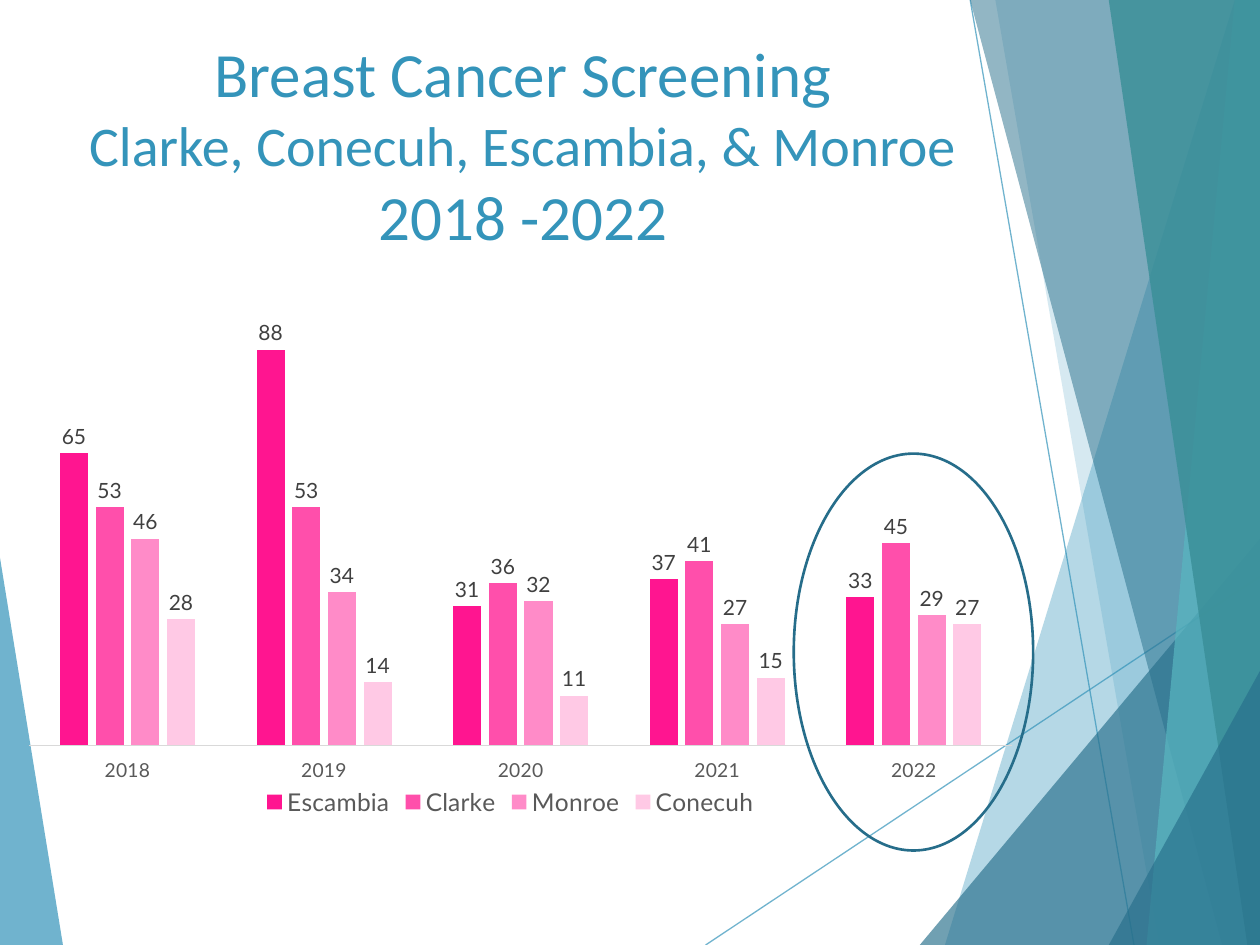
from lxml import etree
from pptx import Presentation
from pptx.chart.data import CategoryChartData
from pptx.dml.color import RGBColor
from pptx.enum.chart import XL_CHART_TYPE, XL_LABEL_POSITION, XL_LEGEND_POSITION, XL_TICK_LABEL_POSITION, XL_TICK_MARK
from pptx.enum.shapes import MSO_CONNECTOR, MSO_SHAPE
from pptx.enum.text import MSO_ANCHOR, MSO_AUTO_SIZE, PP_ALIGN
from pptx.oxml import parse_xml
from pptx.oxml.ns import nsdecls, qn
from pptx.util import Inches, Pt

COLUMN = XL_CHART_TYPE.COLUMN_CLUSTERED
OUTSIDE = XL_LABEL_POSITION.OUTSIDE_END
BOTTOM = XL_LEGEND_POSITION.BOTTOM
LOW = XL_TICK_LABEL_POSITION.LOW
NO_TICK = XL_TICK_MARK.NONE
STRAIGHT = MSO_CONNECTOR.STRAIGHT
OVAL = MSO_SHAPE.OVAL
TOP = MSO_ANCHOR.TOP
NO_FIT = MSO_AUTO_SIZE.NONE
CENTER = PP_ALIGN.CENTER

BLUE = RGBColor(0x34, 0x94, 0xBA)
DEEP_BLUE = RGBColor(0x27, 0x6F, 0x8B)
TEAL = RGBColor(0x58, 0xB6, 0xC0)
DEEP_TEAL = RGBColor(0x3A, 0x8F, 0x98)
RING = RGBColor(0x26, 0x6D, 0x8A)
AXIS = RGBColor(0xD9, 0xD9, 0xD9)
LABEL = RGBColor(0x40, 0x40, 0x40)
GREY = RGBColor(0x59, 0x59, 0x59)
BLACK = RGBColor(0, 0, 0)

W, H = Inches(10), Inches(7.5)
YEARS = ["2018", "2019", "2020", "2021", "2022"]
COUNTIES = [
    ("Escambia", (65, 88, 31, 37, 33), RGBColor(0xFF, 0x15, 0x90)),
    ("Clarke", (53, 53, 36, 41, 45), RGBColor(0xFF, 0x4F, 0xAB)),
    ("Monroe", (46, 34, 32, 27, 29), RGBColor(0xFF, 0x8B, 0xC8)),
    ("Conecuh", (28, 14, 11, 15, 27), RGBColor(0xFF, 0xC9, 0xE5)),
]
TITLE = [
    ("Breast Cancer Screening", 36),
    ("Clarke, Conecuh, Escambia, & Monroe", 32),
    ("2018 -2022", 36),
]
RAYS = [((0.56, 1), (1, 0.61)), ((0.77, 0), (0.9, 1))]
BANDS = [
    ((0.98, 0), 0.75, BLUE, 36),
    ((0.79, 0), 0.92, BLUE, 20),
    ((1, 0.57), 0.73, DEEP_BLUE, 66),
    ((0.77, 0), 0.97, DEEP_BLUE, 50),
    ((0.98, 0), 0.91, TEAL, 70),
    ((0.88, 0), 0.99, DEEP_TEAL, 82),
    ((1, 0.71), 0.88, DEEP_BLUE, 66),
]


def set_format(obj, formats):
    for name, value in formats.items():
        setattr(obj, name, value)


def set_font(font, size, color, name="Lato"):
    set_format(font, {"size": Pt(size), "name": name, "bold": False})
    font.color.rgb = color


def set_alpha(sp, percent):
    for clr in sp._element.spPr.iter(qn("a:srgbClr")):
        etree.SubElement(clr, qn("a:alpha")).set("val", str(percent * 1000))


def add_polygon(s, box, points, color, alpha):
    x, y, w, h = box
    start, *rest = [(x + round(w * px), y + round(h * py)) for px, py in points]
    builder = s.shapes.build_freeform(*start, scale=1.0)
    builder.add_line_segments(rest, close=True)
    sp = builder.convert_to_shape()
    sp.shadow.inherit = False
    sp.fill.solid()
    sp.fill.fore_color.rgb = color
    sp.line.fill.background()
    set_alpha(sp, alpha)


def add_ray(s, box, start, end):
    x, y, w, h = box
    ends = [round(v) for px, py in (start, end) for v in (x + w * px, y + h * py)]
    line = s.shapes.add_connector(STRAIGHT, *ends)
    line.line.width = Pt(0.75)
    line.line.color.rgb = BLUE
    set_alpha(line, 70)
    etree.SubElement(line._element.spPr, qn("a:effectLst"))


def add_backdrop(s, box):
    add_polygon(s, box, [(0, 0.59), (0.05, 1), (0, 1)], BLUE, 70)
    for start, end in RAYS:
        add_ray(s, box, start, end)
    for (left, top), foot, color, alpha in BANDS:
        points = [(left, top), (foot, 1), (1, 1), (1, top)]
        add_polygon(s, box, points, color, alpha)


def add_title(s, box):
    sp = s.shapes.title
    set_format(sp, dict(zip(("left", "top", "width", "height"), box)))
    tf = sp.text_frame
    set_format(tf, {"word_wrap": True, "auto_size": NO_FIT, "vertical_anchor": TOP})
    p = tf.paragraphs[0]
    p.alignment = CENTER
    for i, (text, size) in enumerate(TITLE):
        if i:
            p.add_line_break()
        r = p.add_run()
        r.text = text
        set_font(r.font, size, BLUE, "Calibri")


def set_plot_layout(chart, x, y, w, h):
    area = chart._chartSpace.chart.plotArea
    for old in area.findall(qn("c:layout")):
        area.remove(old)
    sizes = "".join(f'<c:{k} val="{v}"/>' for k, v in zip("xywh", (x, y, w, h)))
    area.insert(0, parse_xml(
        f'<c:layout {nsdecls("c")}><c:manualLayout><c:layoutTarget val="inner"/>'
        f'<c:xMode val="edge"/><c:yMode val="edge"/>{sizes}</c:manualLayout></c:layout>'))


def add_screening_chart(s, box):
    data = CategoryChartData()
    data.categories = YEARS
    for name, values, _ in COUNTIES:
        data.add_series(name, values)
    chart = s.shapes.add_chart(COLUMN, *box, data).chart
    set_format(chart, {"has_title": False, "has_legend": True})
    set_font(chart.font, 10, BLACK)
    set_format(chart.legend, {"position": BOTTOM, "include_in_layout": False})
    set_font(chart.legend.font, 14, GREY)

    axis = chart.category_axis
    set_format(axis, {"major_tick_mark": NO_TICK, "tick_label_position": LOW})
    set_font(axis.tick_labels.font, 11, GREY)
    axis.format.line.color.rgb = AXIS
    axis.format.line.width = Pt(0.75)
    set_format(chart.value_axis, {
        "visible": False, "has_major_gridlines": False,
        "minimum_scale": 0, "maximum_scale": 100})

    plot = chart.plots[0]
    set_format(plot, {"gap_width": 219, "overlap": -27, "vary_by_categories": False})
    for series, (_, _, color) in zip(plot.series, COUNTIES):
        series.format.fill.solid()
        series.format.fill.fore_color.rgb = color
        labels = series.data_labels
        set_format(labels, {"show_value": True, "position": OUTSIDE})
        set_font(labels.font, 12, LABEL)
    set_plot_layout(chart, 0.04, 0.04, 0.94, 0.82)


def add_highlight(s, box):
    ring = s.shapes.add_shape(OVAL, *box)
    ring.shadow.inherit = False
    ring.fill.background()
    ring.line.color.rgb = RING
    ring.line.width = Pt(1.5)


def share(x, y, w, h):
    return round(W * x), round(H * y), round(W * w), round(H * h)


def main():
    prs = Presentation()
    set_format(prs, {"slide_width": W, "slide_height": H})
    s = prs.slides.add_slide(prs.slide_layouts[5])
    add_backdrop(s, share(0, 0, 1, 1))
    add_title(s, share(0.02, 0.03, 0.79, 0.22))
    add_screening_chart(s, share(-0.01, 0.29, 0.83, 0.58))
    add_highlight(s, share(0.63, 0.48, 0.19, 0.42))
    prs.save("out.pptx")


if __name__ == "__main__":
    main()
